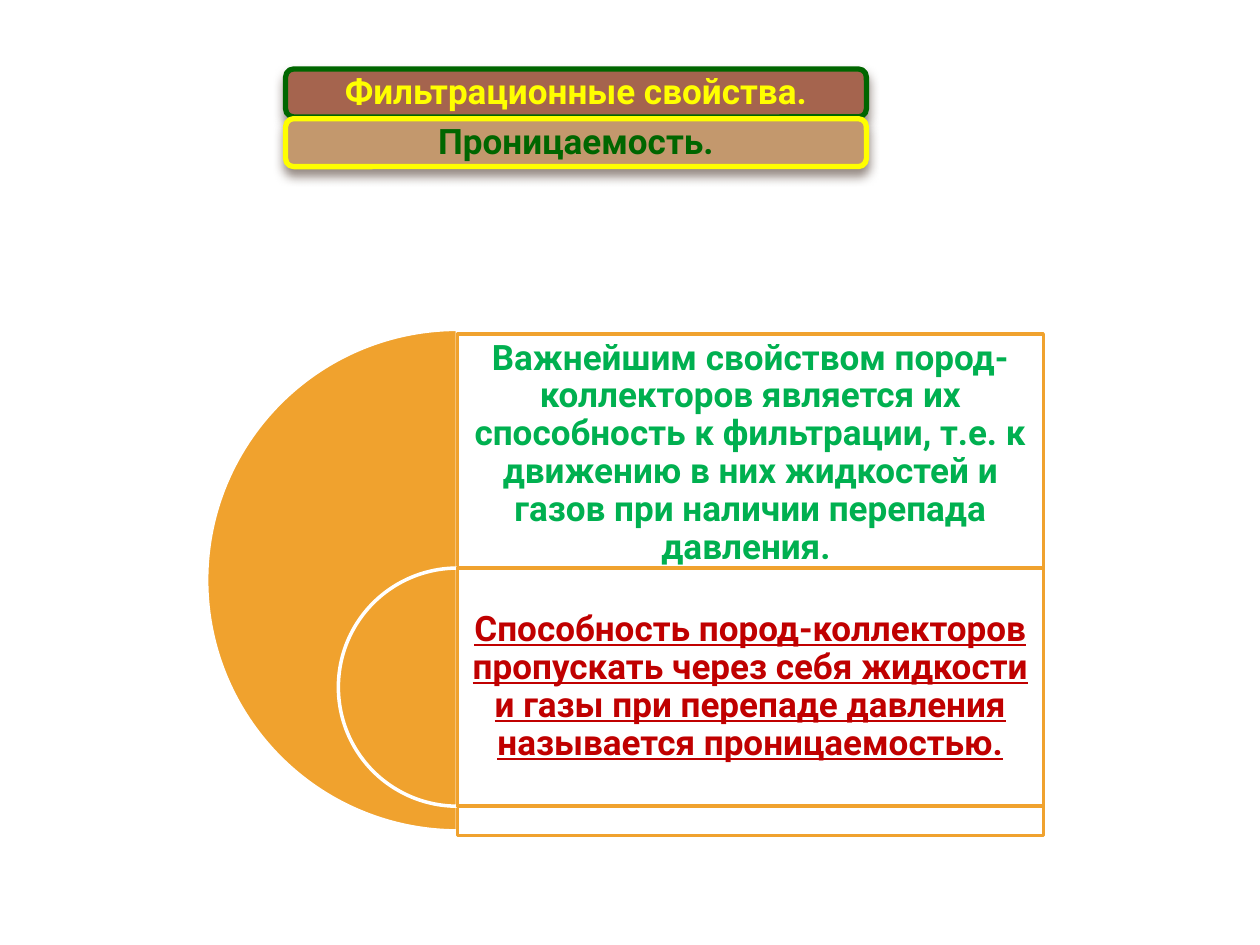
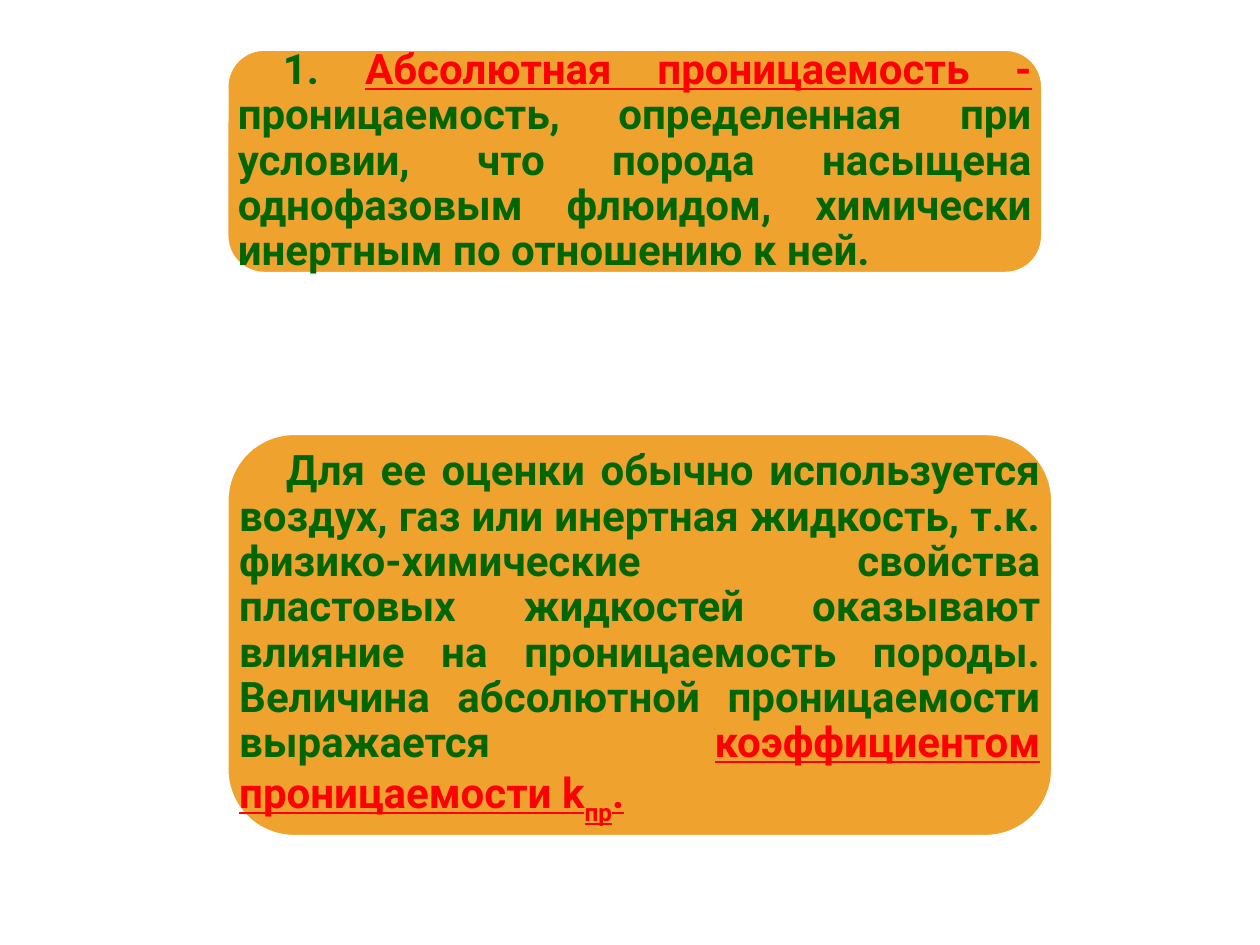
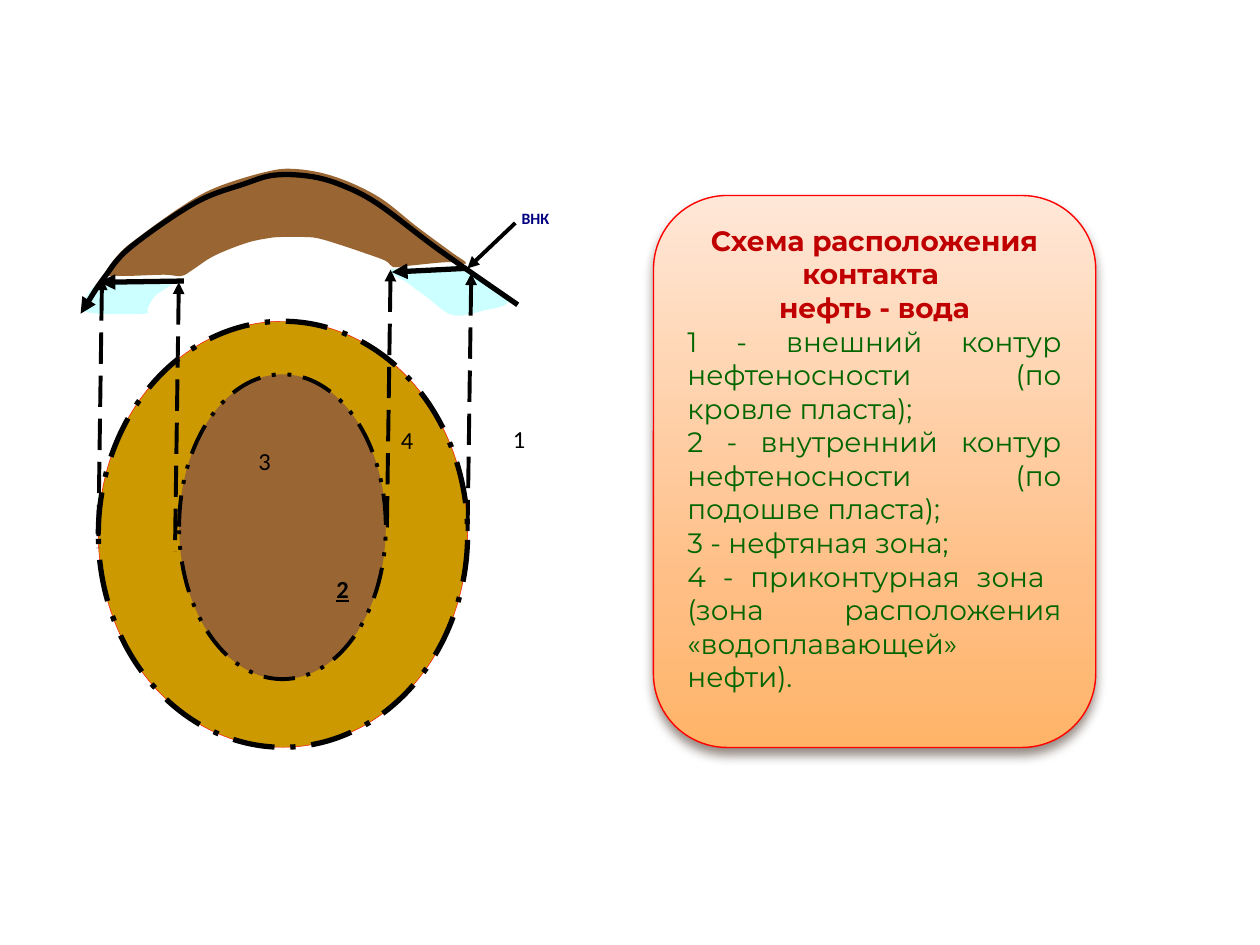
from copy import deepcopy
from dataclasses import dataclass
from typing import Any, Optional

from lxml.etree import SubElement
from pptx import Presentation
from pptx.dml.color import RGBColor
from pptx.enum.dml import MSO_LINE as Dash
from pptx.enum.shapes import MSO_CONNECTOR as Link, MSO_SHAPE as Form
from pptx.enum.text import MSO_ANCHOR as Anchor, PP_ALIGN as Align
from pptx.oxml.ns import qn
from pptx.util import Pt

BLACK = RGBColor(0x00, 0x00, 0x00)
WHITE = RGBColor(0xFF, 0xFF, 0xFF)
RED = RGBColor(0xFF, 0x00, 0x00)
DARK_RED = RGBColor(0xC0, 0x00, 0x00)
GREEN = RGBColor(0x00, 0x66, 0x00)
BRIGHT_GREEN = RGBColor(0x00, 0xB0, 0x50)
YELLOW = RGBColor(0xFF, 0xFF, 0x00)
NAVY = RGBColor(0x00, 0x00, 0x80)
ORANGE = RGBColor(0xF0, 0xA2, 0x2E)
BRICK = RGBColor(0xA5, 0x64, 0x4E)
SAND = RGBColor(0xC3, 0x98, 0x6D)
OCHRE = RGBColor(0xCC, 0x99, 0x00)
OIL = RGBColor(0x99, 0x66, 0x33)
WATER = RGBColor(0xCC, 0xFF, 0xFF)
PEACH = {
    0: RGBColor(0xFF, 0xE7, 0xD7),
    72: RGBColor(0xFF, 0xBE, 0x84),
    100: RGBColor(0xFF, 0xB4, 0x68),
}

Point = tuple[float, float]


@dataclass(frozen=True)
class Box:
    """Place and size in points."""
    left: float
    top: float
    width: float
    height: float

    def lengths(self) -> list[int]:
        """Return the four lengths for python-pptx."""
        return [Pt(v) for v in (self.left, self.top, self.width, self.height)]


@dataclass(frozen=True)
class Stroke:
    """Colour, width, dash and starting arrowhead of a line."""
    color: RGBColor
    width: float
    dash: Optional[Any] = None
    arrow: bool = False


@dataclass(frozen=True)
class Run:
    """Piece of text with one format."""
    text: str
    color: RGBColor
    size: float
    bold: bool = True
    underline: bool = False
    font: str = "Roboto"
    baseline: int = 0


@dataclass(frozen=True)
class Para:
    """Paragraph made of runs."""
    runs: list[Run]
    align: Any = Align.CENTER
    spacing: float = 0.9
    indent: float = 0


@dataclass(frozen=True)
class Label:
    """Mark on the reservoir scheme."""
    box: Box
    run: Run


def assign(target: Any, values: dict[str, Any]) -> None:
    """Set every named attribute of the target."""
    for name, value in values.items():
        setattr(target, name, value)


def stroke_line(line: Any, properties: Any, stroke: Stroke) -> None:
    """Style a line and add its arrowhead."""
    line.color.rgb = stroke.color
    assign(line, {"width": Pt(stroke.width), "dash_style": stroke.dash})
    if stroke.arrow:
        SubElement(properties.find(qn("a:ln")), qn("a:headEnd"), type="triangle")


def paint(shape: Any, fill: Optional[RGBColor], stroke: Optional[Stroke]) -> None:
    """Give a shape its fill and line without a shadow."""
    shape.shadow.inherit = False
    if fill is None:
        shape.fill.background()
    else:
        shape.fill.solid()
        shape.fill.fore_color.rgb = fill
    if stroke is None:
        shape.line.fill.background()
    else:
        stroke_line(shape.line, shape._element.spPr, stroke)


def add_form(slide: Any, form: Any, box: Box, fill: Optional[RGBColor], stroke: Stroke) -> Any:
    """Draw a preset shape."""
    shape = slide.shapes.add_shape(form, *box.lengths())
    paint(shape, fill, stroke)
    return shape


def cast_shadow(shape: Any) -> None:
    """Add the soft brown shadow below a shape."""
    effects = shape._element.spPr.find(qn("a:effectLst"))
    shadow = SubElement(effects, qn("a:outerShdw"), blurRad=str(Pt(6)), dist=str(Pt(4)),
                        dir="5400000", rotWithShape="0")
    color = SubElement(shadow, qn("a:srgbClr"), val="4E3B30")
    SubElement(color, qn("a:alpha"), val="60000")


def write(frame: Any, paras: list[Para], anchor: Any, inset: Point) -> None:
    """Fill a text frame with paragraphs."""
    across, down = map(Pt, inset)
    assign(frame, {"word_wrap": True, "vertical_anchor": anchor, "margin_left": across,
                   "margin_right": across, "margin_top": down, "margin_bottom": down})
    for number, para in enumerate(paras):
        paragraph = frame.add_paragraph() if number else frame.paragraphs[0]
        assign(paragraph, {"alignment": para.align, "line_spacing": para.spacing})
        if para.indent:
            paragraph._p.get_or_add_pPr().set("indent", str(Pt(para.indent)))
        for piece in para.runs:
            run = paragraph.add_run()
            run.text = piece.text
            assign(run.font, {"name": piece.font, "size": Pt(piece.size),
                              "bold": piece.bold, "underline": piece.underline})
            run.font.color.rgb = piece.color
            if piece.baseline:
                run.font._element.set("baseline", str(piece.baseline * 1000))


def add_text(slide: Any, box: Box, paras: list[Para], anchor: Any = Anchor.MIDDLE,
             inset: Point = (6, 6)) -> None:
    """Place a text box."""
    write(slide.shapes.add_textbox(*box.lengths()).text_frame, paras, anchor, inset)


def add_line(slide: Any, start: Point, end: Point, stroke: Stroke) -> None:
    """Draw a straight connector."""
    connector = slide.shapes.add_connector(Link.STRAIGHT, *map(Pt, start + end))
    properties = connector._element.spPr
    stroke_line(connector.line, properties, stroke)
    SubElement(properties, qn("a:effectLst"))


def bend(shape: Any, closed: bool) -> None:
    """Turn the straight segments of an outline into Catmull-Rom curves."""
    knots = [(int(p.get("x")), int(p.get("y"))) for p in shape._element.iter(qn("a:pt"))]
    before, after = (knots[-2], knots[1]) if closed else (knots[0], knots[-1])
    ring = [before, *knots, after]
    segments = list(shape._element.iter(qn("a:lnTo")))
    for segment, a, b, c, d in zip(segments, ring, ring[1:], ring[2:], ring[3:]):
        leave = [q + (r - p) / 6 for p, q, r in zip(a, b, c)]
        arrive = [q - (r - p) / 6 for p, q, r in zip(b, c, d)]
        curve = segment.getparent().makeelement(qn("a:cubicBezTo"))
        for x, y in (leave, arrive, c):
            SubElement(curve, qn("a:pt"), x=str(round(x)), y=str(round(y)))
        segment.getparent().replace(segment, curve)


def add_curve(slide: Any, knots: list[Point], fill: Optional[RGBColor] = None,
              stroke: Optional[Stroke] = None) -> None:
    """Draw a smooth outline, closed when it is filled."""
    closed = fill is not None
    start, *rest = [(Pt(x), Pt(y)) for x, y in knots]
    builder = slide.shapes.build_freeform(*start)
    builder.add_line_segments(rest + [start] if closed else rest, close=closed)
    outline = builder.convert_to_shape()
    bend(outline, closed)
    paint(outline, fill, stroke)


def build_filtration(slide: Any) -> None:
    """Introduce filtration and permeability."""
    headings = [("Фильтрационные свойства.", BRICK, GREEN, YELLOW),
                ("Проницаемость.", SAND, YELLOW, GREEN)]
    for row, (text, fill, border, color) in enumerate(headings):
        box = Box(163.2, 39.4 + 28.4 * row, 331.9, 27.4)
        cast_shadow(add_form(slide, Form.ROUNDED_RECTANGLE, box, fill, Stroke(border, 3)))
        add_text(slide, box, [Para([Run(text, color, 20)])])

    axis, width, row_height = 261.4, 334.8, 136.1
    statements = [
        (188.2, 190.9, 286.6, Run(
            "Важнейшим свойством пород-коллекторов является их способность к фильтрации, "
            "т.е. к движению в них жидкостей и газов при наличии перепада давления. ",
            BRIGHT_GREEN, 20)),
        (324.6, 324.6, row_height, Run(
            "Способность пород-коллекторов пропускать через себя жидкости и газы "
            "при перепаде давления называется проницаемостью.",
            DARK_RED, 20, underline=True)),
    ]
    for pie_top, top, size, statement in statements:
        half = add_form(slide, Form.PIE, Box(axis - size / 2, pie_top, size, size),
                        ORANGE, Stroke(WHITE, 2))
        half.adjustments[0], half.adjustments[1] = 54, 162
        panel = add_form(slide, Form.RECTANGLE, Box(axis, top, width, size),
                         WHITE, Stroke(ORANGE, 2))
        color = panel._element.spPr.find(qn("a:solidFill"))[0]
        SubElement(color, qn("a:alpha"), val="90000")
        add_text(slide, Box(axis, top, width, row_height), [Para([statement])])


def build_absolute_permeability(slide: Any) -> None:
    """Define absolute permeability and its measure."""
    definition = [
        Run("1. ", GREEN, 24),
        Run("Абсолютная проницаемость - ", RED, 24, underline=True),
        Run("проницаемость, определенная при условии, что порода насыщена однофазовым "
            "флюидом, химически инертным по отношению к ней. ", GREEN, 24),
    ]
    measure = [
        Run("Для ее оценки обычно используется воздух, газ или инертная жидкость, т.к. "
            "физико-химические свойства пластовых жидкостей оказывают влияние на "
            "проницаемость породы. Величина абсолютной проницаемости выражается ", GREEN, 24),
        Run("коэффициентом проницаемости k", RED, 24, underline=True),
        Run("пр", RED, 24, underline=True, baseline=-30),
        Run(".", RED, 24, underline=True),
    ]
    cards = [(Box(129.6, 247.7, 472, 230.4), measure, (7.2, 3.6), 26.8),
             (Box(129.6, 28.1, 466.3, 128.2), definition, (6.3, 3.1), 25.8)]
    for box, runs, inset, indent in cards:
        add_form(slide, Form.ROUNDED_RECTANGLE, box, ORANGE, Stroke(WHITE, 2))
        add_text(slide, box, [Para(runs, Align.JUSTIFY, indent=indent)], inset=inset)


def build_contact_scheme(slide: Any) -> None:
    """Draw the oil-water contact in section and plan."""
    west_water = [(57.6, 160.6), (48.2, 172.1), (50.4, 178.6), (82.1, 179.3),
                  (84.2, 176.4), (88.6, 169.2), (98.6, 160.6), (73.4, 160.6)]
    east_water = [(264.2, 153.4), (290.2, 171.4), (275, 177.8), (258.5, 180),
                  (244.1, 169.9), (233.3, 162), (223.2, 154.1), (249.1, 153.4)]
    oil_layer = [(60.5, 156.2), (68.4, 144.7), (78.5, 136.1), (103.7, 118.1),
                 (123.1, 107.3), (150.5, 98.6), (167.8, 96.5), (190.8, 100.8),
                 (216, 112.3), (238.3, 129.6), (257.8, 144), (266.4, 150.5),
                 (255.6, 149.8), (233.3, 151.9), (224.6, 152.6), (220.3, 149),
                 (206.6, 144), (193.7, 139.7), (181.4, 136.1), (172.1, 135.4),
                 (162, 135.4), (153.4, 136.1), (140.4, 139), (122.4, 146.2),
                 (110.2, 154.1), (103.7, 157.7), (93.6, 157), (69.8, 157.7)]
    roof = [(46.1, 179.3), (59.8, 158.4), (74.9, 141.1), (111.6, 115.9),
            (139.7, 105.1), (157, 100.1), (177.1, 100.8), (195.1, 105.8),
            (216, 116.6), (250.6, 142.6), (295.9, 174.2)]
    outer_contour = Box(56.2, 183.6, 211, 243.4)
    inner_contour = Box(102.4, 213.9, 118.1, 174.2)
    thick_arrow = Stroke(BLACK, 3, arrow=True)

    add_line(slide, (267.1, 153.4), (294.5, 127.4), Stroke(BLACK, 2.25, arrow=True))
    add_form(slide, Form.OVAL, outer_contour, OCHRE, Stroke(RED, 0.25))
    for knots, fill in ((west_water, WATER), (east_water, WATER), (oil_layer, OIL)):
        add_curve(slide, knots, fill)
    for x, y in ((58.3, 159.1), (102.2, 161.3), (223.2, 154.1), (269.3, 156.2)):
        add_line(slide, (x, y), (x - 2.2, y + 154.1),
                 Stroke(BLACK, 2.25, Dash.LONG_DASH, arrow=True))
    add_form(slide, Form.OVAL, inner_contour, OIL, Stroke(BLACK, 2.25, Dash.DASH_DOT_DOT))
    add_form(slide, Form.OVAL, outer_contour, None, Stroke(BLACK, 3, Dash.LONG_DASH_DOT))
    add_curve(slide, roof, stroke=thick_arrow)
    add_line(slide, (56.9, 161.3), (105.1, 160.6), thick_arrow)
    add_line(slide, (223.9, 155.5), (265.7, 153.4), thick_arrow)

    labels = [
        Label(Box(143.3, 252.7, 27.4, 34.6), Run("3", BLACK, 14, False, font="Calibri")),
        Label(Box(288.7, 239.8, 27.4, 34.6), Run("1", BLACK, 14, False, font="Calibri")),
        Label(Box(224.8, 240.5, 27.4, 34.6), Run("4", BLACK, 14, False, font="Calibri")),
        Label(Box(293.8, 117.1, 66.2, 34.6), Run("ВНК", NAVY, 9, font="Calibri")),
        Label(Box(187.9, 325.8, 32.4, 34.6), Run("2", BLACK, 14, True, True, "Calibri")),
    ]
    for label in labels:
        add_text(slide, label.box, [Para([label.run], Align.LEFT, 1)], Anchor.TOP, (4.3, 2.2))
    build_legend(slide)


def build_legend(slide: Any) -> None:
    """Explain the marks of the scheme."""
    titles = ["Схема расположения контакта ", "нефть - вода"]
    entries = [
        "1 - внешний контур нефтеносности (по кровле пласта); ",
        "2 - внутренний контур нефтеносности (по подошве пласта); ",
        "3 - нефтяная зона; ",
        "4 - приконтурная зона  (зона расположения «водоплавающей» нефти).",
    ]
    legend = add_form(slide, Form.ROUNDED_RECTANGLE, Box(373.4, 111.7, 252.7, 315.4),
                      WHITE, Stroke(RED, 0.79))
    cast_shadow(legend)
    legend.fill.gradient()
    legend.fill.gradient_angle = 270
    stops = legend._element.spPr.find(qn("a:gradFill")).find(qn("a:gsLst"))
    stops.insert(1, deepcopy(stops[0]))
    for stop, (position, color) in zip(legend.fill.gradient_stops, PEACH.items()):
        stop.position = position / 100
        stop.color.rgb = color
    paras = [Para([Run(text, DARK_RED, 16, font="Montserrat")], spacing=1) for text in titles]
    paras += [Para([Run(text, GREEN, 16, False, font="Montserrat")], Align.JUSTIFY, 1)
              for text in entries]
    write(legend.text_frame, paras, Anchor.TOP, (7.2, 3.6))


def main() -> None:
    """Build the three slides and save them."""
    deck = Presentation()
    assign(deck, {"slide_width": Pt(720), "slide_height": Pt(540)})
    for build in (build_filtration, build_absolute_permeability, build_contact_scheme):
        build(deck.slides.add_slide(deck.slide_layouts[6]))
    deck.save("out.pptx")


if __name__ == "__main__":
    main()
